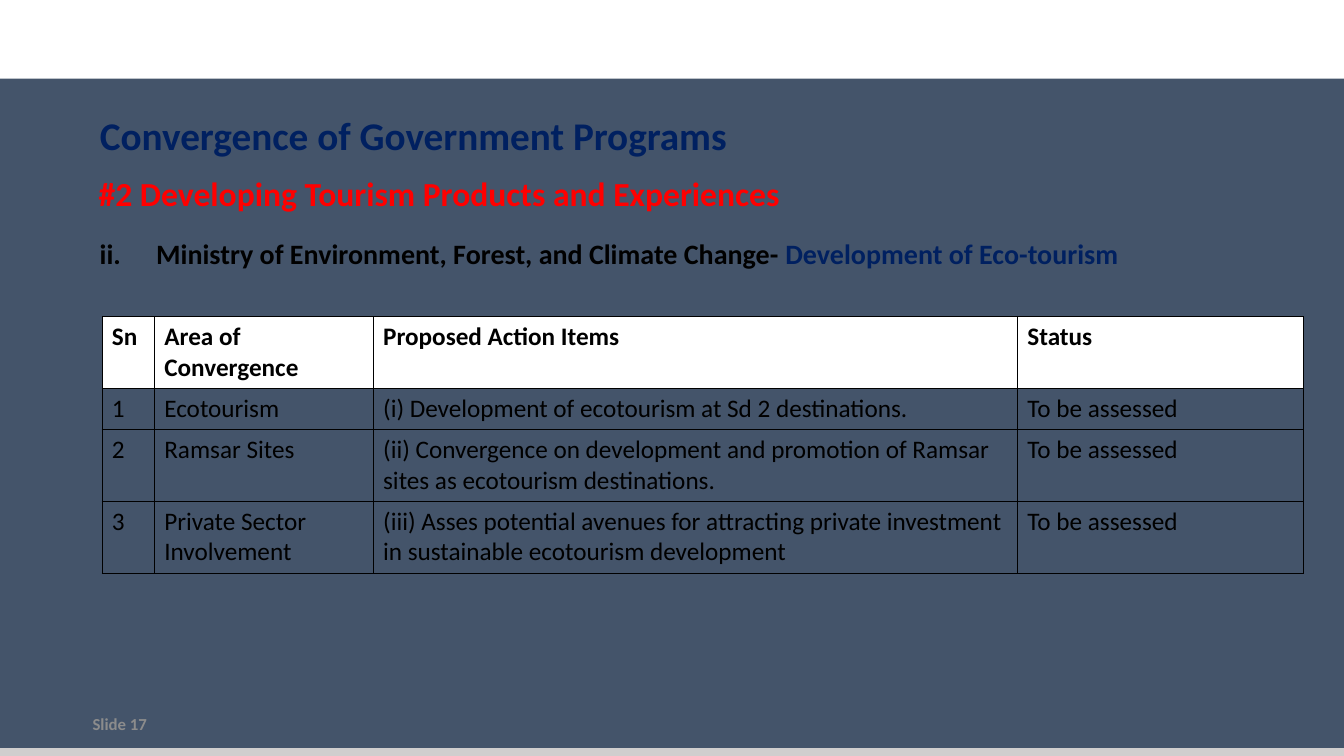
from dataclasses import dataclass
from lxml.etree import SubElement
from pptx import Presentation
from pptx.dml.color import RGBColor
from pptx.enum.shapes import MSO_CONNECTOR, MSO_SHAPE
from pptx.enum.text import MSO_ANCHOR, MSO_AUTO_SIZE, PP_ALIGN
from pptx.oxml.ns import qn
from pptx.util import Emu, Inches, Pt


@dataclass(frozen=True)
class Theme:
    face: str = "Calibri"
    back: str = "44546A"
    white: str = "FFFFFF"
    black: str = "000000"
    navy: str = "002060"
    red: str = "FF0000"
    gray: str = "8C8C8C"
    rule: str = "D0CECE"
    head: int = 28
    sub: int = 24
    lead: int = 20
    cell: int = 18
    foot: int = 12
    edge: float = 0.25
    base: int = 6


@dataclass(frozen=True)
class Box:
    left: float
    top: float
    wide: float
    high: float


@dataclass(frozen=True)
class Span:
    text: str
    tone: str


@dataclass(frozen=True)
class Label:
    box: Box
    spans: tuple[Span, ...]
    size: int
    anchor: MSO_ANCHOR = MSO_ANCHOR.MIDDLE
    start: int = 0


THEME = Theme()
WIDE, HIGH = Inches(13.33), Inches(7.5)
INDENT = Inches(0.56)

BAND = Box(0, 0, 100, 10.4)
RULE = 99.47
TITLE = Label(Box(6.68, 13.47, 62.4, 8.67),
              (Span("Convergence of Government Programs", THEME.navy),), THEME.head)
LABELS = (
    Label(Box(6.15, 94, 22.5, 3.6), (Span("Slide 17", THEME.gray),), THEME.foot),
    Label(Box(6.6, 22, 88.5, 7.2),
          (Span("#2 Developing Tourism Products and Experiences", THEME.red),), THEME.sub),
    Label(Box(6.68, 30.67, 88.5, 61.07),
          (Span("Ministry of Environment, Forest, and Climate Change- ", THEME.black),
           Span("Development of Eco-tourism", THEME.navy)),
          THEME.lead, MSO_ANCHOR.TOP, 2),
)
GRID = Box(7.58, 41.87, 89.42, 33.74)
COLS = (3.9, 16.28, 47.94, 21.3)
ROWS = (9.33, 5.47, 9.47, 9.47)
STATUS = "To be assessed"
CELLS = (
    ("Sn", "Area of Convergence", "Proposed Action Items", "Status"),
    ("1", "Ecotourism", "(i) Development of ecotourism at Sd 2 destinations.", STATUS),
    ("2", "Ramsar Sites", "(ii) Convergence on development and promotion of Ramsar "
     "sites as ecotourism destinations.", STATUS),
    ("3", "Private Sector Involvement", "(iii) Asses potential avenues for attracting "
     "private investment in sustainable ecotourism development", STATUS),
)


def across(share: float) -> Emu:
    return Emu(round(WIDE * share / 100))


def down(share: float) -> Emu:
    return Emu(round(HIGH * share / 100))


def place(box: Box) -> tuple[Emu, Emu, Emu, Emu]:
    return across(box.left), down(box.top), across(box.wide), down(box.high)


def tint(tone: str) -> RGBColor:
    return RGBColor.from_string(tone)


def style(para, size: int, bold: bool) -> None:
    para.alignment = PP_ALIGN.LEFT
    para.font.name = THEME.face
    para.font.size = Pt(size)
    para.font.bold = bold


def number(para, start: int) -> None:
    props = para._p.get_or_add_pPr()
    props.set("marL", str(INDENT))
    props.set("indent", str(-INDENT))
    SubElement(props, qn("a:buFont"), typeface="+mj-lt")
    SubElement(props, qn("a:buAutoNum"), type="romanLcPeriod", startAt=str(start))


def write(shape, label: Label) -> None:
    shape.left, shape.top, shape.width, shape.height = place(label.box)
    frame = shape.text_frame
    frame.word_wrap = True
    frame.auto_size = MSO_AUTO_SIZE.NONE
    frame.vertical_anchor = label.anchor
    para = frame.paragraphs[0]
    if label.start:
        number(para, label.start)
    style(para, label.size, True)
    for span in label.spans:
        run = para.add_run()
        run.text = span.text
        run.font.color.rgb = tint(span.tone)


def border(cell) -> None:
    props = cell._tc.get_or_add_tcPr()
    for spot, side in enumerate(("a:lnL", "a:lnR", "a:lnT", "a:lnB")):
        line = props.makeelement(qn(side), {"w": str(Pt(THEME.edge))})
        fill = SubElement(line, qn("a:solidFill"))
        SubElement(fill, qn("a:srgbClr"), val=THEME.black)
        props.insert(spot, line)


def tabulate(slide) -> None:
    table = slide.shapes.add_table(len(ROWS), len(COLS), *place(GRID)).table
    table.first_row = table.horz_banding = False
    for col, share in zip(table.columns, COLS):
        col.width = across(share)
    for row, share, texts in zip(table.rows, ROWS, CELLS):
        row.height = down(share)
        top = texts is CELLS[0]
        for cell, text in zip(row.cells, texts):
            cell.text = text
            para = cell.text_frame.paragraphs[0]
            style(para, THEME.cell, top)
            para.font.color.rgb = tint(THEME.black)
            if top:
                cell.fill.solid()
                cell.fill.fore_color.rgb = tint(THEME.white)
            else:
                cell.fill.background()
            border(cell)


def paint(slide) -> None:
    slide.background.fill.solid()
    slide.background.fill.fore_color.rgb = tint(THEME.back)
    band = slide.shapes.add_shape(MSO_SHAPE.RECTANGLE, *place(BAND))
    band.shadow.inherit = False
    band.fill.solid()
    band.fill.fore_color.rgb = tint(THEME.white)
    band.line.fill.background()
    rule = slide.shapes.add_connector(MSO_CONNECTOR.STRAIGHT, 0, down(RULE), WIDE, down(RULE))
    rule.line.color.rgb = tint(THEME.rule)
    rule.line.width = Pt(THEME.base)
    SubElement(rule._element.spPr, qn("a:effectLst"))


def main() -> None:
    deck = Presentation()
    deck.slide_width, deck.slide_height = WIDE, HIGH
    slide = deck.slides.add_slide(deck.slide_layouts[5])
    paint(slide)
    write(slide.shapes.title, TITLE)
    for label in LABELS:
        write(slide.shapes.add_textbox(*place(label.box)), label)
    tabulate(slide)
    deck.save("out.pptx")


if __name__ == "__main__":
    main()
